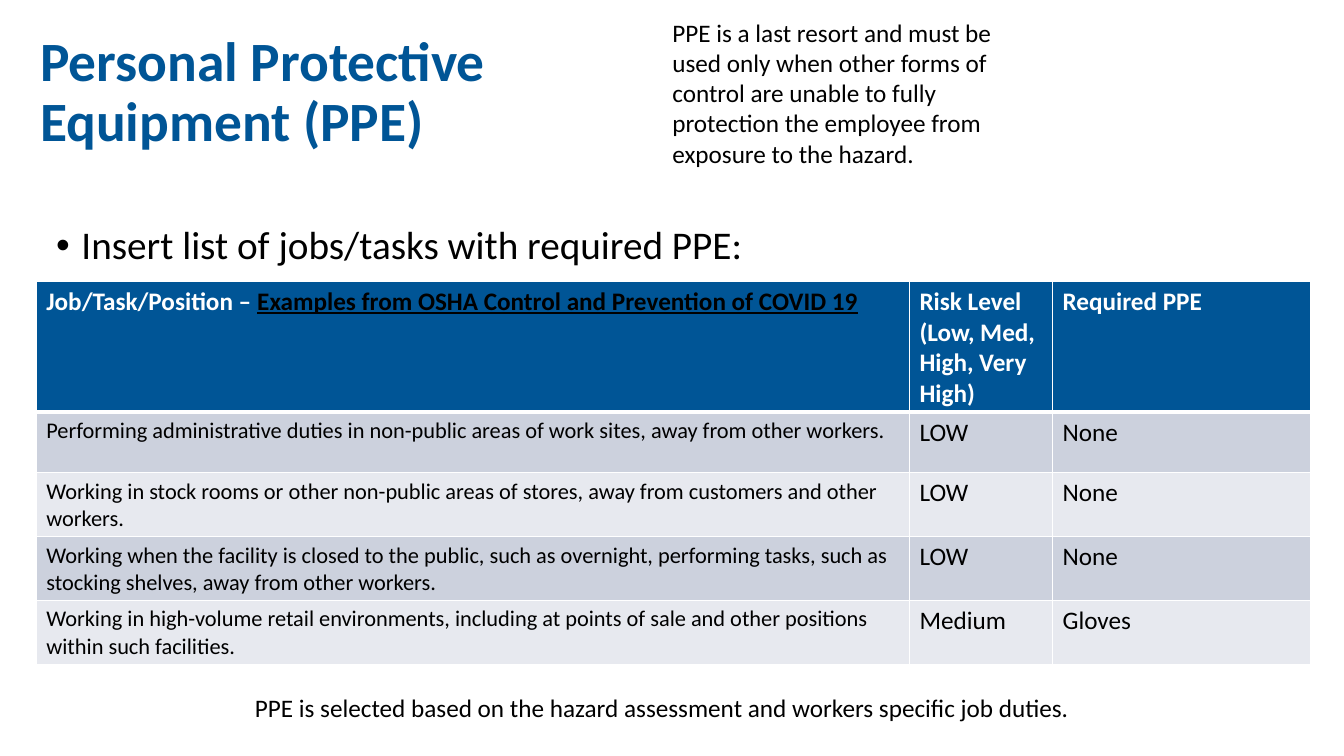
import pptx
import pptx.dml.color
import pptx.enum.text
import pptx.oxml
import pptx.oxml.ns
import pptx.util

COLORS = {
    "blue": "005596",
    "black": "000000",
    "white": "FFFFFF",
    "band_dark": "CCD1DD",
    "band_light": "E7E9EF",
}
HEADERS = [
    [("Job/Task/Position – ", "white", False),
     ("Examples from OSHA Control and Prevention of COVID 19", "black", True)],
    [("Risk Level (Low, Med, High, Very High)", "white", False)],
    [("Required PPE", "white", False)],
]
TASKS = [
    ("Performing administrative duties in non-public areas of work sites, away from other workers.",
     "LOW", "None"),
    ("Working in stock rooms or other non-public areas of stores, away from customers and other workers.",
     "LOW", "None"),
    ("Working when the facility is closed to the public, such as overnight, performing tasks, "
     "such as stocking shelves, away from other workers.", "LOW", "None"),
    ("Working in high-volume retail environments, including at points of sale and other positions "
     "within such facilities.", "Medium", "Gloves"),
]


def rgb(name):
    return pptx.dml.color.RGBColor.from_string(COLORS[name])


class SlideBuilder:
    font_name = "Calibri"
    grid_columns = 100
    grid_rows = 100

    def __init__(self, presentation):
        self.presentation = presentation
        self.slide = presentation.slides.add_slide(presentation.slide_layouts[6])

    def columns(self, count):
        return round(self.presentation.slide_width * count / self.grid_columns)

    def rows(self, count):
        return round(self.presentation.slide_height * count / self.grid_rows)

    def place(self, left, top, width, height):
        return self.columns(left), self.rows(top), self.columns(width), self.rows(height)

    def style(self, paragraph, size, color="black", bold=False):
        font = paragraph.font
        font.name = self.font_name
        font.size = pptx.util.Pt(size)
        font.bold = bold
        font.color.rgb = rgb(color)

    def text(self, area, text, size, color="black", bold=False, align="LEFT",
             anchor="TOP", inset=None, line_spacing=None, bullet=False):
        shape = self.slide.shapes.add_textbox(*self.place(*area))
        frame = shape.text_frame
        frame.word_wrap = True
        frame.vertical_anchor = getattr(pptx.enum.text.MSO_ANCHOR, anchor)
        if inset is not None:
            margin = self.columns(inset)
            frame.margin_left = frame.margin_right = margin
            frame.margin_top = frame.margin_bottom = margin
        paragraph = frame.paragraphs[0]
        paragraph.text = text
        paragraph.alignment = getattr(pptx.enum.text.PP_ALIGN, align)
        if line_spacing:
            paragraph.line_spacing = line_spacing
        if bullet:
            self.add_bullet(paragraph)
        self.style(paragraph, size, color, bold)

    def add_bullet(self, paragraph):
        properties = paragraph._p.get_or_add_pPr()
        indent = pptx.util.Inches(0.25)
        properties.set("marL", str(indent))
        properties.set("indent", str(-indent))
        namespace = pptx.oxml.ns.nsdecls("a")
        for element in ('buFont {} typeface="Arial"', 'buChar {} char="•"'):
            properties.append(pptx.oxml.parse_xml(f"<a:{element.format(namespace)}/>"))

    def border(self, cell, top=1, bottom=1):
        properties = cell._tc.get_or_add_tcPr()
        for side, width in (("L", 1), ("R", 1), ("T", top), ("B", bottom)):
            properties.append(pptx.oxml.parse_xml(
                f'<a:ln{side} {pptx.oxml.ns.nsdecls("a")} w="{pptx.util.Pt(width)}">'
                f'<a:solidFill><a:srgbClr val="{COLORS["white"]}"/></a:solidFill></a:ln{side}>'))

    def fill(self, cell, color):
        cell.fill.solid()
        cell.fill.fore_color.rgb = rgb(color)

    def table(self, left, top, widths, heights, headers, records):
        area = self.place(left, top, sum(widths), sum(heights))
        table = self.slide.shapes.add_table(len(heights), len(widths), *area).table
        table.first_row = table.horz_banding = False
        for column, width in zip(table.columns, widths):
            column.width = self.columns(width)
        for row, height in zip(table.rows, heights):
            row.height = self.rows(height)
        for index, pieces in enumerate(headers):
            cell = table.cell(0, index)
            self.border(cell, bottom=3)
            self.fill(cell, "blue")
            paragraph = cell.text_frame.paragraphs[0]
            self.style(paragraph, 18, "white", bold=True)
            for text, color, underline in pieces:
                run = paragraph.add_run()
                run.text = text
                run.font.color.rgb = rgb(color)
                run.font.underline = underline
        for row_index, record in enumerate(records, 1):
            for index, text in enumerate(record):
                cell = table.cell(row_index, index)
                self.border(cell, top=3 if row_index == 1 else 1)
                self.fill(cell, "band_dark" if row_index % 2 else "band_light")
                paragraph = cell.text_frame.paragraphs[0]
                paragraph.text = text
                self.style(paragraph, 16 if index == 0 else 18)


def main():
    presentation = pptx.Presentation()
    presentation.slide_width = pptx.util.Inches(13.33)
    presentation.slide_height = pptx.util.Inches(7.5)
    builder = SlideBuilder(presentation)
    builder.text((0, 0, 53.56, 24.67), "Personal Protective Equipment (PPE)", 39.6,
                 color="blue", bold=True, anchor="MIDDLE", inset=3, line_spacing=0.9)
    builder.text((3.45, 29.2, 93.85, 7), "Insert list of jobs/tasks with required PPE:", 28,
                 line_spacing=0.9, bullet=True)
    builder.table(2.7, 37.2, [64.97, 10.65, 19.2], [14.93] + [8] * len(TASKS), HEADERS, TASKS)
    builder.text((49.29, 1.6, 27.61, 21.6),
                 "PPE is a last resort and must be used only when other forms of control are unable "
                 "to fully protection the employee from exposure to the hazard.", 18)
    builder.text((1.95, 90.93, 94.6, 5.33),
                 "PPE is selected based on the hazard assessment and workers specific job duties.",
                 18, align="CENTER")
    presentation.save("out.pptx")


if __name__ == "__main__":
    main()
